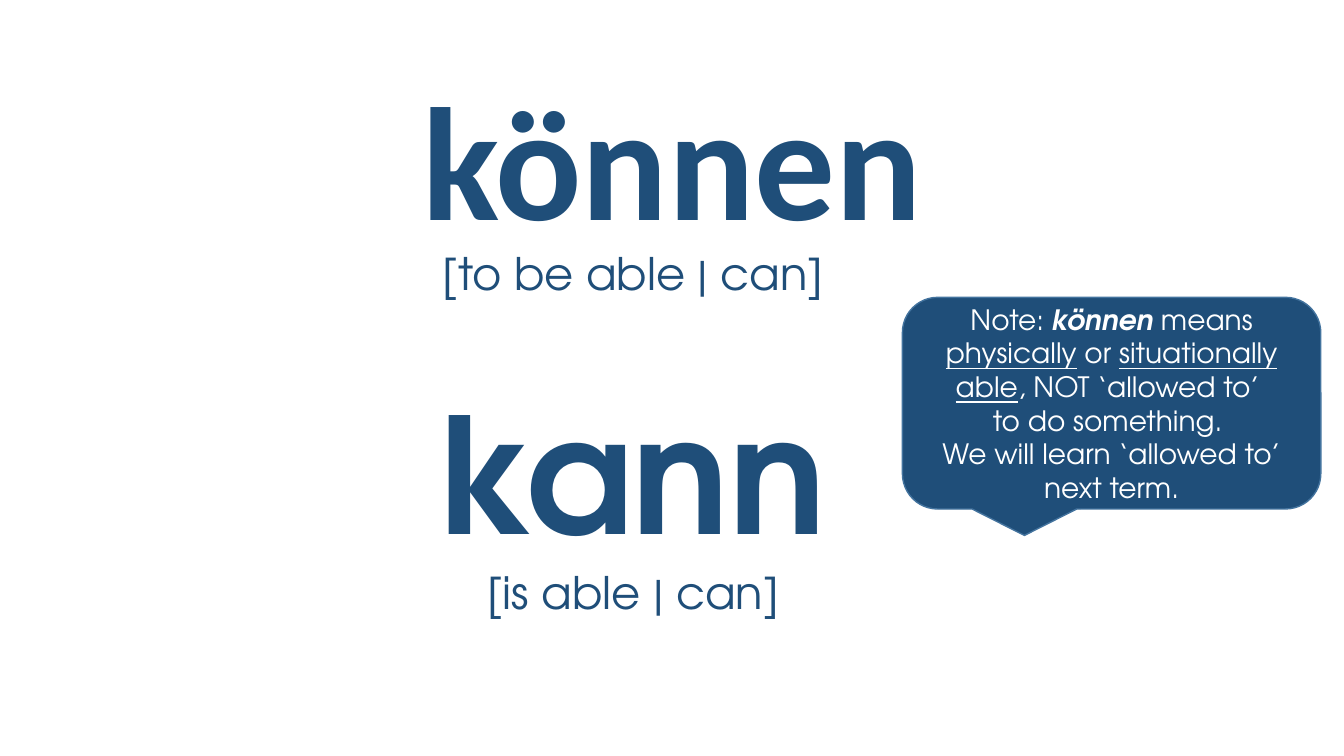
import pptx
import pptx.util
import pptx.dml.color
import pptx.enum.shapes
import pptx.enum.text
from dataclasses import dataclass

Inches = pptx.util.Inches
SHAPES = pptx.enum.shapes.MSO_SHAPE
ANCHOR = pptx.enum.text.MSO_ANCHOR
GROW = pptx.enum.text.MSO_AUTO_SIZE.SHAPE_TO_FIT_TEXT


@dataclass(frozen=True)
class Theme:
    navy: str = "1F4E79"
    edge: str = "43739E"
    white: str = "FFFFFF"
    font: str = "TeX Gyre Adventor"
    title_font: str = "Calibri"
    verb: int = 115
    gloss: int = 32
    note: int = 20


THEME = Theme()


def rgb(code):
    return pptx.dml.color.RGBColor.from_string(code)


def style(r, size, color, font=THEME.font, bold=False):
    r.font.size = pptx.util.Pt(size)
    r.font.name = font
    r.font.color.rgb = rgb(color)
    r.font.bold = bold


def center(sp, anchor):
    tf = sp.text_frame
    tf.word_wrap = True
    tf.vertical_anchor = anchor
    p = tf.paragraphs[0]
    p.alignment = pptx.enum.text.PP_ALIGN.CENTER
    return p


def add_verb(s, text, box, font=THEME.font, anchor=ANCHOR.TOP):
    """Large bold verb form."""
    sp = s.shapes.add_textbox(*map(Inches, box))
    sp.text_frame.text = text
    p = center(sp, anchor)
    style(p.runs[0], THEME.verb, THEME.navy, font, bold=True)
    return sp


def add_gloss(s, text, top):
    """English meaning on a white strip."""
    sp = s.shapes.add_shape(SHAPES.RECTANGLE, Inches(3.32), Inches(top),
                            Inches(5.92), Inches(0.64))
    sp.shadow.inherit = False
    sp.fill.solid()
    sp.fill.fore_color.rgb = rgb(THEME.white)
    sp.line.fill.background()
    sp.text_frame.text = text
    p = center(sp, ANCHOR.TOP)
    sp.text_frame.auto_size = GROW
    style(p.runs[0], THEME.gloss, THEME.navy)


def add_note(s, lines, box):
    """Callout; each line is a list of (text, marks), marks from b, i, u."""
    sp = s.shapes.add_shape(SHAPES.ROUNDED_RECTANGULAR_CALLOUT, *map(Inches, box))
    sp.shadow.inherit = False
    sp.fill.solid()
    sp.fill.fore_color.rgb = rgb(THEME.navy)
    sp.line.color.rgb = rgb(THEME.edge)
    sp.line.width = pptx.util.Pt(1)
    p = center(sp, ANCHOR.MIDDLE)
    for i, line in enumerate(lines):
        if i:
            p.add_line_break()
        for text, marks in line:
            r = p.add_run()
            r.text = text
            style(r, THEME.note, THEME.white, bold="b" in marks)
            r.font.italic = "i" in marks
            r.font.underline = "u" in marks


def main():
    prs = pptx.Presentation()
    prs.slide_width, prs.slide_height = Inches(13.33), Inches(7.5)
    s = prs.slides.add_slide(prs.slide_layouts[6])

    # Infinitive and its meaning
    title = add_verb(s, "können", (0.92, 0.94, 11.5, 1.45), THEME.title_font, ANCHOR.MIDDLE)
    title.text_frame.paragraphs[0].line_spacing = 0.9
    add_gloss(s, "[to be able | can]", 2.39)

    # Third person form and its meaning
    kann = add_verb(s, "kann", (3.32, 3.66, 5.92, 2.04))
    kann.text_frame.auto_size = GROW
    add_gloss(s, "[is able | can]", 5.55)

    # Usage note
    add_note(s, [
        [("Note: ", ""), ("können", "bi"), (" means ", ""), ("physically", "u"),
         (" or ", ""), ("situationally", "u"), (" ", ""), ("able", "u"),
         (", NOT ‘allowed to’ ", "")],
        [("to do something. ", "")],
        [("We will learn ‘allowed to’ next term.", "")],
    ], (8.95, 2.95, 4.15, 2.1))

    prs.save("out.pptx")


if __name__ == "__main__":
    main()
